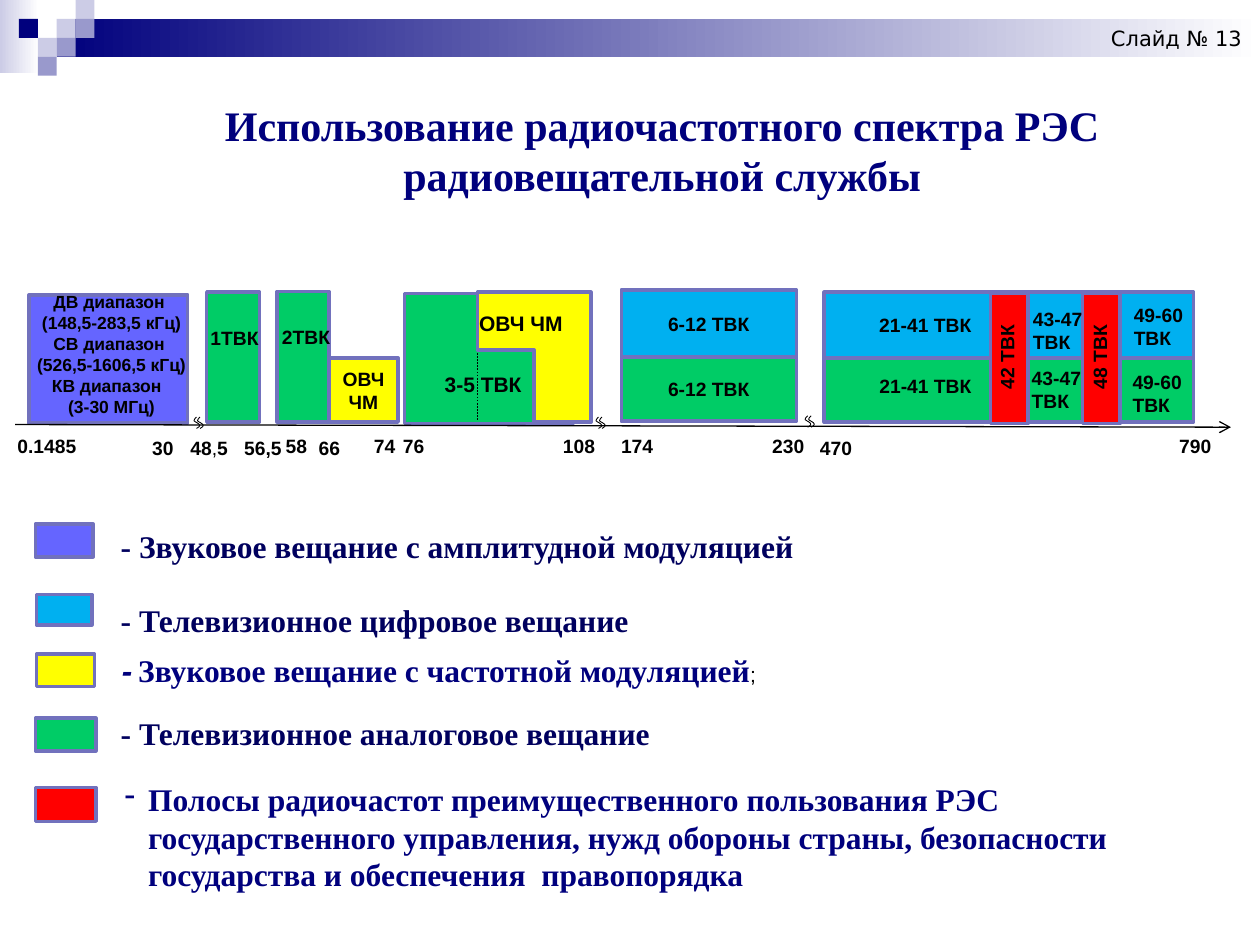
from typing import NamedTuple

from lxml import etree
from pptx import Presentation
from pptx.dml.color import RGBColor
from pptx.enum.dml import MSO_LINE
from pptx.enum.shapes import MSO_CONNECTOR, MSO_SHAPE
from pptx.enum.text import MSO_ANCHOR, MSO_AUTO_SIZE, PP_ALIGN
from pptx.oxml.ns import qn
from pptx.util import Pt

RECT, CORNER = MSO_SHAPE.RECTANGLE, MSO_SHAPE.CORNER
LEFT, CENTER = PP_ALIGN.LEFT, PP_ALIGN.CENTER
SERIF, SANS = "Times New Roman", "Arial"
NAVY, DARK, BLACK = "00007D", "00005E", "000000"
VIOLET, BLUE, GREEN, YELLOW, RED = "6565FF", "00B0F0", "00CC66", "FFFF00", "FF0000"
BORDER, LILAC, PALE, WHITE = "7171BD", "9999CC", "CCCCE6", "FFFFFF"
SQUARE = 10.8


class Box(NamedTuple):
    x: float
    y: float
    w: float
    h: float


class Band(NamedTuple):
    box: Box
    color: str
    text: str = ""


class Label(NamedTuple):
    text: str
    box: Box
    align: PP_ALIGN = LEFT
    size: float = 11
    rotation: float = 0
    wrap: bool = False


class Tick(NamedTuple):
    text: str
    x: float
    y: float
    w: float


class Legend(NamedTuple):
    swatch: Box
    color: str
    box: Box
    runs: list


HEADER_SQUARES = [(2, 1, PALE), (3, 0, PALE), (3, 1, LILAC), (1, 2, PALE),
                  (0, 1, NAVY), (2, 2, LILAC), (1, 3, LILAC)]

BANDS = [
    Band(Box(16.6, 168.5, 90.7, 73.4), VIOLET),
    Band(Box(118.1, 167, 30.2, 74.2), GREEN),
    Band(Box(158.4, 166.6, 29.5, 74.6), GREEN),
    Band(Box(187.9, 204.5, 39.6, 36.7), YELLOW, "ОВЧ ЧМ"),
    Band(Box(355, 165.6, 100.1, 39.2), BLUE, "6-12 ТВК"),
    Band(Box(471, 167, 211, 38.2), BLUE),
    Band(Box(355, 204, 100.1, 36.7), GREEN, "6-12 ТВК"),
    Band(Box(471, 204.5, 211, 36.7), GREEN),
    Band(Box(566, 167.8, 21.6, 74.2), RED),
    Band(Box(618.5, 167.8, 21.6, 74.2), RED),
    Band(Box(231.1, 167.8, 96.5, 74.2), GREEN),
]

LABELS = [
    Label("ДВ диапазон\n (148,5-283,5 кГц)\nСВ диапазон\n (526,5-1606,5 кГц)\n"
          "КВ диапазон \n (3-30 МГц)", Box(10.8, 162.9, 103, 79.9), CENTER, 10),
    Label("1ТВК", Box(113.2, 182.9, 44.6, 20.2), wrap=True),
    Label("2ТВК", Box(154, 182.2, 42.5, 20.9)),
    Label("21-41 ТВК", Box(444.2, 175.7, 169.2, 20.2), CENTER, wrap=True),
    Label("21-41 ТВК", Box(446.4, 210.2, 164.9, 20.9), CENTER, wrap=True),
    Label("42 ТВК", Box(540.2, 193.7, 70.6, 20.9), CENTER, rotation=270, wrap=True),
    Label("48 ТВК", Box(593.2, 193.7, 70.6, 20.9), CENTER, rotation=270, wrap=True),
    Label("3-5 ТВК", Box(247, 208.8, 59, 21.6), size=12),
    Label("ОВЧ ЧМ", Box(266.4, 174.2, 62.6, 21.6), CENTER, 12),
    Label("43-47\nТВК", Box(583.2, 172.1, 46.1, 33.8)),
    Label("43-47\nТВК", Box(582.5, 205.9, 46.1, 33.8)),
    Label("49-60\nТВК", Box(640.8, 169.9, 46.1, 33.8)),
    Label("49-60\nТВК", Box(640.1, 208.1, 46.1, 33.8)),
]

TICKS = [
    Tick("0.1485", 2.9, 244.8, 48.2), Tick("30", 79.9, 245.5, 26.6),
    Tick("56,5", 132.5, 246, 36), Tick("58", 156.2, 244.8, 26.6),
    Tick("66", 175, 245.5, 26.6), Tick("74", 206.6, 244.8, 26.6),
    Tick("76", 223.2, 244.8, 26.6), Tick("108", 314.6, 244.8, 33.1),
    Tick("174", 347.8, 244.8, 33.1), Tick("230", 434.2, 244.8, 33.1),
    Tick("470", 461.5, 245.5, 33.1), Tick("790", 666.7, 244.8, 33.1),
]

LEGENDS = [
    Legend(Box(20.2, 299.5, 33.1, 18.7), VIOLET, Box(61.9, 297.4, 409, 28.8),
           [("- Звуковое вещание с амплитудной модуляцией", {})]),
    Legend(Box(20.9, 339.8, 31.7, 17.3), BLUE, Box(61.9, 339.8, 308.2, 28.8),
           [("- Телевизионное цифровое вещание", {})]),
    Legend(Box(20.9, 373.7, 33.1, 18.7), YELLOW, Box(62.6, 368.6, 381.6, 28.8),
           [("-", dict(font=SANS, color=NAVY, italic=True)),
            (" ", dict(font=SANS, size=12, bold=False)),
            ("Звуковое вещание с частотной модуляцией", dict(color=NAVY)),
            (";", dict(font=SANS, size=12, color=BLACK, bold=False))]),
    Legend(Box(20.2, 410.4, 34.6, 18.7), GREEN, Box(61.9, 404.6, 320.4, 28.8),
           [("- Телевизионное аналоговое вещание", {})]),
]

BREAKS = [(110.9, 238.3), (340.6, 238.3), (460.1, 237.6)]
BREAK_CURVES = [((1.4, 0), (0.7, 0.7), (0, 1.4), (0, 2.2)),
                ((0, 2.2), (0.7, 2.9), (2.9, 3.6), (3.2, 4.7)),
                ((3.2, 4.7), (3.4, 5.6), (1.4, 6.5), (1.4, 6.5))]


def rgb(color: str) -> RGBColor:
    return RGBColor.from_string(color)


def place(box: Box) -> list:
    return [Pt(v) for v in box]


def add_run(p, text: str, size=11, font=SANS, color=BLACK, bold=True, italic=False):
    r = p.add_run()
    r.text = text
    f = r.font
    f.size, f.name, f.bold, f.italic = Pt(size), font, bold, italic
    f.color.rgb = rgb(color)
    return r


def write(tf, text, align=LEFT, **fmt):
    """Fill a frame from a string with line breaks, or from (text, format) runs."""
    lines = [[(line, {})] for line in text.split("\n")] if isinstance(text, str) else [text]
    for i, runs in enumerate(lines):
        p = tf.add_paragraph() if i else tf.paragraphs[0]
        p.alignment = align
        for part, own in runs:
            add_run(p, part, **{**fmt, **own})


def add_text(shapes, text, box: Box, wrap=False, rotation=0, **fmt):
    sp = shapes.add_textbox(*place(box))
    sp.rotation = rotation
    sp.text_frame.word_wrap = wrap
    sp.text_frame.auto_size = MSO_AUTO_SIZE.SHAPE_TO_FIT_TEXT
    write(sp.text_frame, text, **fmt)
    return sp


def add_block(shapes, box: Box, color: str, border=BORDER, kind=RECT, end_color=None):
    sp = shapes.add_shape(kind, *place(box))
    sp.shadow.inherit = False
    if end_color:
        sp.fill.gradient()
        sp.fill.gradient_angle = 0
        for stop, tone in zip(sp.fill.gradient_stops, (color, end_color)):
            stop.color.rgb = rgb(tone)
    else:
        sp.fill.solid()
        sp.fill.fore_color.rgb = rgb(color)
    if border:
        sp.line.color.rgb, sp.line.width = rgb(border), Pt(2)
    else:
        sp.line.fill.background()
    return sp


def add_line(shapes, x1: float, y1: float, x2: float, y2: float, width: float):
    c = shapes.add_connector(MSO_CONNECTOR.STRAIGHT, Pt(x1), Pt(y1), Pt(x2), Pt(y2))
    c.line.color.rgb, c.line.width = rgb(BLACK), Pt(width)
    etree.SubElement(c._element.spPr, qn("a:effectLst"))
    return c


def add_wave(shapes, x: float, y: float, steps: int = 4):
    """Draw one stroke of an axis break as sampled cubic curves."""
    points = []
    for a, b, c, d in BREAK_CURVES:
        for t in (i / steps for i in range(1, steps + 1)):
            u = 1 - t
            points.append([Pt(o + u**3 * a[k] + 3 * u * u * t * b[k]
                              + 3 * u * t * t * c[k] + t**3 * d[k])
                           for k, o in enumerate((x, y))])
    start = BREAK_CURVES[0][0]
    builder = shapes.build_freeform(Pt(x + start[0]), Pt(y + start[1]))
    builder.add_line_segments(points, close=False)
    sp = builder.convert_to_shape()
    sp.shadow.inherit = False
    sp.fill.background()
    sp.line.color.rgb, sp.line.width = rgb(BLACK), Pt(0.5)


def add_header(shapes):
    add_block(shapes, Box(0, 0, 22.3, 41.8), PALE, None, end_color=WHITE)
    add_block(shapes, Box(32.4, SQUARE, 687.6, 21.6), NAVY, None, end_color=WHITE)
    for col, row, color in HEADER_SQUARES:
        add_block(shapes, Box(SQUARE * (col + 1), SQUARE * row, SQUARE, SQUARE), color, None)
    add_text(shapes, "Слайд № 13", Box(627.8, 10.8, 91.4, 21.6),
             size=12, font="DejaVu Sans", bold=False)
    title = add_text(shapes, "Использование радиочастотного спектра РЭС радиовещательной службы",
                     Box(92.9, 53.3, 571, 65.5), wrap=True, align=CENTER,
                     size=24, font=SERIF, color=NAVY)
    fill = title.text_frame.paragraphs[0].runs[0].font._element.find(qn("a:solidFill"))
    effects = etree.Element(qn("a:effectLst"))
    shadow = etree.SubElement(effects, qn("a:outerShdw"), blurRad="38100", dist="38100", dir="2700000")
    tone = etree.SubElement(shadow, qn("a:srgbClr"), val=BLACK)
    etree.SubElement(tone, qn("a:alpha"), val="43000")
    fill.addnext(effects)


def add_legend(shapes):
    for item in LEGENDS:
        add_block(shapes, item.swatch, item.color)
        add_text(shapes, item.runs, item.box, size=18, font=SERIF, color=DARK)
    add_block(shapes, Box(20.2, 450, 34.6, 19.4), RED)
    sp = add_text(shapes, "Полосы радиочастот преимущественного пользования РЭС государственного "
                  "управления, нужд обороны страны, безопасности государства и обеспечения  правопорядка",
                  Box(64.1, 442.1, 632.9, 72.7), wrap=True, size=18, font=SERIF, color=NAVY)
    pPr = sp.text_frame.paragraphs[0]._p.get_or_add_pPr()
    pPr.set("marL", str(Pt(13.5)))
    pPr.set("indent", str(Pt(-13.5)))
    etree.SubElement(pPr, qn("a:buChar"), char="-")


def add_spectrum(shapes):
    for band in BANDS:
        sp = add_block(shapes, band.box, band.color)
        if band.text:
            tf = sp.text_frame
            tf.margin_left = tf.margin_right = 0
            tf.word_wrap, tf.vertical_anchor = True, MSO_ANCHOR.MIDDLE
            write(tf, band.text, CENTER)
    fm = add_block(shapes, Box(272.9, 167, 64.8, 74.2), YELLOW, kind=CORNER)
    fm.rotation = 180
    fm.adjustments[0], fm.adjustments[1] = 0.51, 0.5
    for item in LABELS:
        add_text(shapes, item.text, item.box, item.wrap, item.rotation,
                 align=item.align, size=item.size)
    for tick in TICKS:
        add_text(shapes, tick.text, Box(tick.x, tick.y, tick.w, 20.2))
    add_text(shapes, [("48", {}), (",", dict(bold=False)), ("5", {})], Box(101.7, 245.5, 36, 20.2))
    axis = add_line(shapes, 8.6, 242.6, 703.4, 244.1, 0.75)
    etree.SubElement(axis.line._get_or_add_ln(), qn("a:tailEnd"), type="arrow")
    for x, y in BREAKS:
        for shift in (0, 2):
            add_wave(shapes, x + shift, y)
    divider = add_line(shapes, 272.9, 201.6, 272.9, 239.8, 0.25)
    divider.line.dash_style = MSO_LINE.DASH


def main():
    prs = Presentation()
    prs.slide_width, prs.slide_height = Pt(720), Pt(540)
    shapes = prs.slides.add_slide(prs.slide_layouts[6]).shapes
    add_header(shapes)
    add_legend(shapes)
    add_spectrum(shapes)
    prs.save("out.pptx")


if __name__ == "__main__":
    main()
